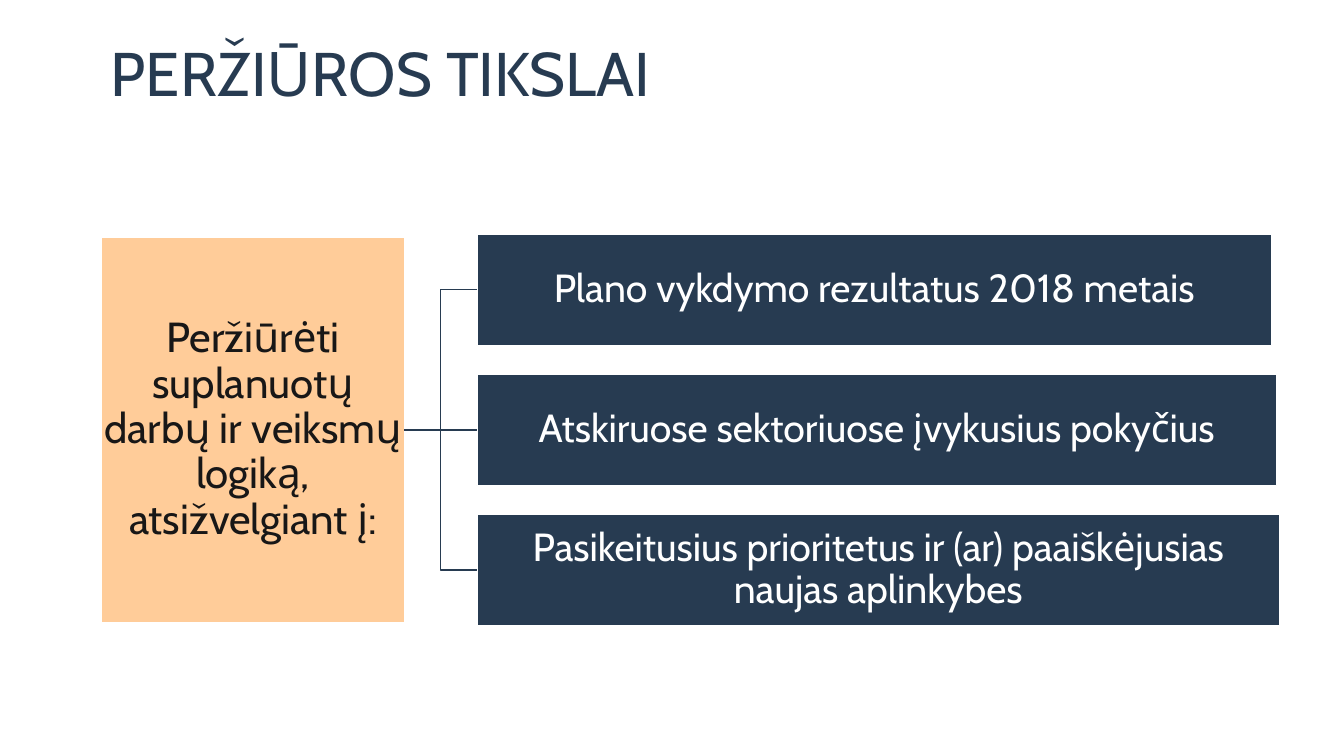
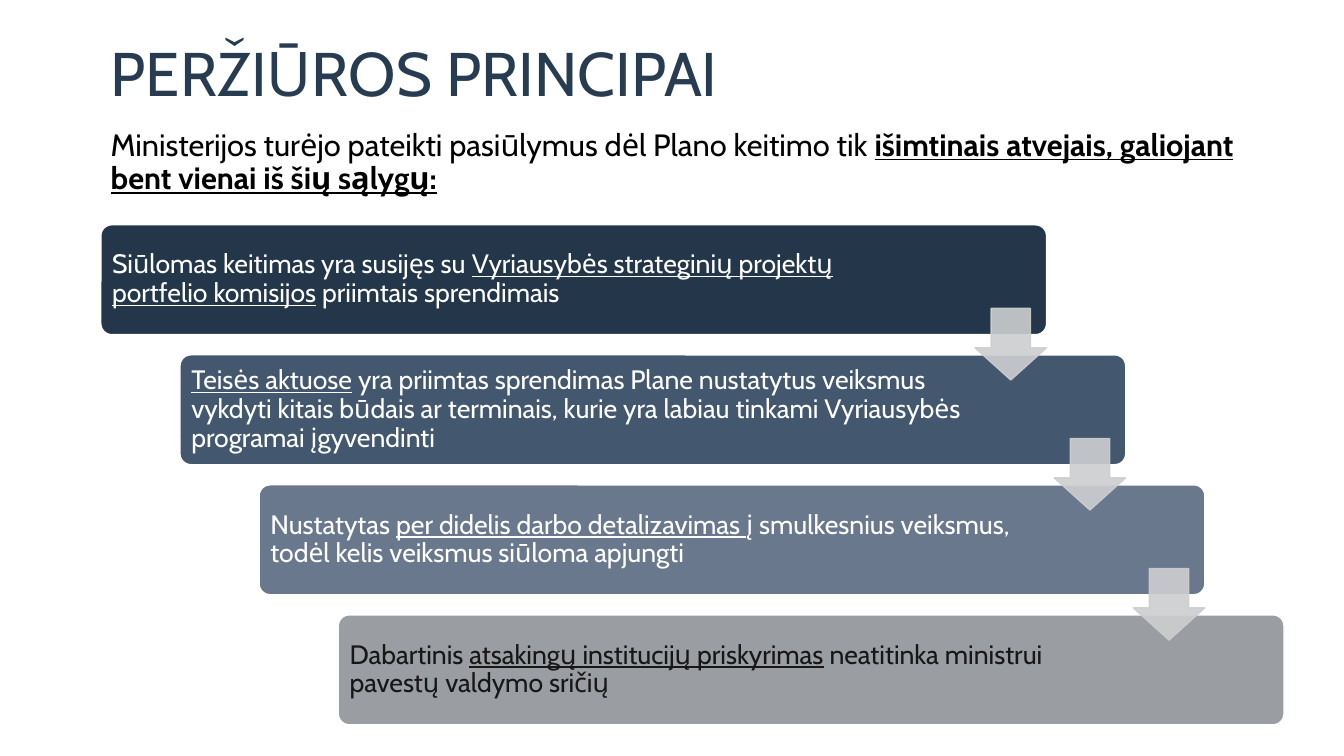
from lxml import etree
from pptx import Presentation
from pptx.dml.color import RGBColor
from pptx.enum.shapes import MSO_CONNECTOR, MSO_SHAPE
from pptx.enum.text import MSO_ANCHOR, PP_ALIGN
from pptx.oxml.ns import qn
from pptx.util import Inches, Pt

FONT = "Cabin"
NAVY = RGBColor(0x27, 0x3B, 0x51)
PEACH = RGBColor(0xFF, 0xCC, 0x99)
WHITE = RGBColor(0xFF, 0xFF, 0xFF)
BLACK = RGBColor(0x00, 0x00, 0x00)
INK = RGBColor(0x18, 0x17, 0x17)
ARROW_GREY = RGBColor(0xCD, 0xCE, 0xD0)
STEP_FILLS = [
    RGBColor(0x23, 0x36, 0x4A),
    RGBColor(0x43, 0x57, 0x6F),
    RGBColor(0x6A, 0x78, 0x8D),
    RGBColor(0x9A, 0x9D, 0xA1),
]
RECTANGLE = MSO_SHAPE.RECTANGLE
ROUNDED = MSO_SHAPE.ROUNDED_RECTANGLE
DOWN_ARROW = MSO_SHAPE.DOWN_ARROW
STRAIGHT, ELBOW = MSO_CONNECTOR.STRAIGHT, MSO_CONNECTOR.ELBOW
LEFT, CENTER = PP_ALIGN.LEFT, PP_ALIGN.CENTER
MIDDLE, TOP = MSO_ANCHOR.MIDDLE, MSO_ANCHOR.TOP
LEFT_SITE, RIGHT_SITE = 1, 3


def write(shape, spans, size, color, align=LEFT, anchor=MIDDLE, bold=False):
    """Fill a shape with one paragraph of (text, emphasised) spans.

    Emphasised spans are underlined, and also bold if asked.
    """
    frame = shape.text_frame
    frame.word_wrap = True
    frame.vertical_anchor = anchor
    paragraph = frame.paragraphs[0]
    paragraph.alignment = align
    paragraph.line_spacing = 0.9
    paragraph.font.name = FONT
    paragraph.font.size = Pt(size)
    paragraph.font.color.rgb = color
    for text, emphasised in spans:
        span = paragraph.add_run()
        span.text = text
        if emphasised:
            span.font.underline = True
            if bold:
                span.font.bold = True


def add_block(page, kind, left, top, width, height, fill, line=WHITE):
    block = page.shapes.add_shape(
        kind, Inches(left), Inches(top), Inches(width), Inches(height))
    block.shadow.inherit = False
    block.fill.solid()
    block.fill.fore_color.rgb = fill
    block.line.color.rgb = line
    block.line.width = Pt(1)
    return block


deck = Presentation()
deck.slide_width = Inches(13.33)
deck.slide_height = Inches(7.5)

pages = []
for title in ["PERŽIŪROS TIKSLAI", "PERŽIŪROS PRINCIPAI"]:
    page = deck.slides.add_slide(deck.slide_layouts[6])
    box = page.shapes.add_textbox(
        Inches(1), Inches(0.31), Inches(11.33), Inches(0.89))
    write(box, [(title, False)], 44, NAVY)
    pages.append(page)
goals_page, principles_page = pages

# Goals: one root block branching to three goals
root = add_block(goals_page, RECTANGLE, 1.01, 2.35, 3, 3.83, PEACH)
root_text = "Peržiūrėti suplanuotų darbų ir veiksmų logiką, atsižvelgiant į:"
write(root, [(root_text, False)], 30, INK, CENTER)
goals = [
    ("Plano vykdymo rezultatus 2018 metais", 7.88, ELBOW),
    ("Atskiruose sektoriuose įvykusius pokyčius", 7.93, STRAIGHT),
    ("Pasikeitusius prioritetus ir (ar) paaiškėjusias naujas aplinkybes",
     7.96, ELBOW),
]
branch_blocks = [root]
for row, (text, width, connector_kind) in enumerate(goals):
    goal = add_block(
        goals_page, RECTANGLE, 4.73, 2.32 + 1.39 * row, width, 1.11, NAVY)
    write(goal, [(text, False)], 28, WHITE, CENTER)
    branch_blocks.append(goal)
    branch = goals_page.shapes.add_connector(connector_kind, 0, 0, 0, 0)
    branch.begin_connect(root, RIGHT_SITE)
    branch.end_connect(goal, LEFT_SITE)
    branch.line.color.rgb = NAVY
    branch.line.width = Pt(1)
    etree.SubElement(branch._element.spPr, qn("a:effectLst"))
for block in branch_blocks:
    frame = block.text_frame
    frame.margin_left = frame.margin_right = Inches(0.02)
    frame.margin_top = frame.margin_bottom = Inches(0.02)

# Principles: an introduction and a staircase of four conditions
intro = principles_page.shapes.add_textbox(
    Inches(1), Inches(1.24), Inches(11.73), Inches(0.89))
write(intro, [
    ("Ministerijos turėjo pateikti pasiūlymus dėl Plano keitimo tik ", False),
    ("išimtinais atvejais, galiojant bent vienai iš šių sąlygų:", True),
], 22, BLACK, anchor=TOP, bold=True)

conditions = [
    [("Siūlomas keitimas yra susijęs su ", False),
     ("Vyriausybės strateginių projektų portfelio komisijos", True),
     (" priimtais sprendimais", False)],
    [("Teisės aktuose", True),
     (" yra priimtas sprendimas Plane nustatytus veiksmus vykdyti kitais "
      "būdais ar terminais, kurie yra labiau tinkami Vyriausybės programai "
      "įgyvendinti", False)],
    [("Nustatytas ", False),
     ("per didelis darbo detalizavimas ", True),
     ("į smulkesnius veiksmus, todėl kelis veiksmus siūloma apjungti", False)],
    [("Dabartinis ", False),
     ("atsakingų institucijų priskyrimas", True),
     (" neatitinka ministrui pavestų valdymo sričių", False)],
]
corners = [(1 + 0.785 * step, 2.23 + 1.29 * step)
           for step in range(len(conditions))]
text_colors = [WHITE, WHITE, WHITE, INK]
for (left, top), fill, color, spans in zip(
        corners, STEP_FILLS, text_colors, conditions):
    stair = add_block(principles_page, ROUNDED, left, top, 9.38, 1.09, fill)
    stair.adjustments[0] = 0.1
    write(stair, spans, 19, color)
    stair.text_frame.margin_left = Inches(0.08)
    stair.text_frame.margin_right = Inches(1.57)

for left, top in corners[:-1]:
    arrow = add_block(principles_page, DOWN_ARROW, left + 8.67, top + 0.83,
                      0.71, 0.71, ARROW_GREY, ARROW_GREY)
    arrow.adjustments[0] = 0.55
    arrow.adjustments[1] = 0.45
    for color_element in arrow._element.spPr.iter(qn("a:srgbClr")):
        etree.SubElement(color_element, qn("a:alpha"), val="90000")

deck.save("out.pptx")
